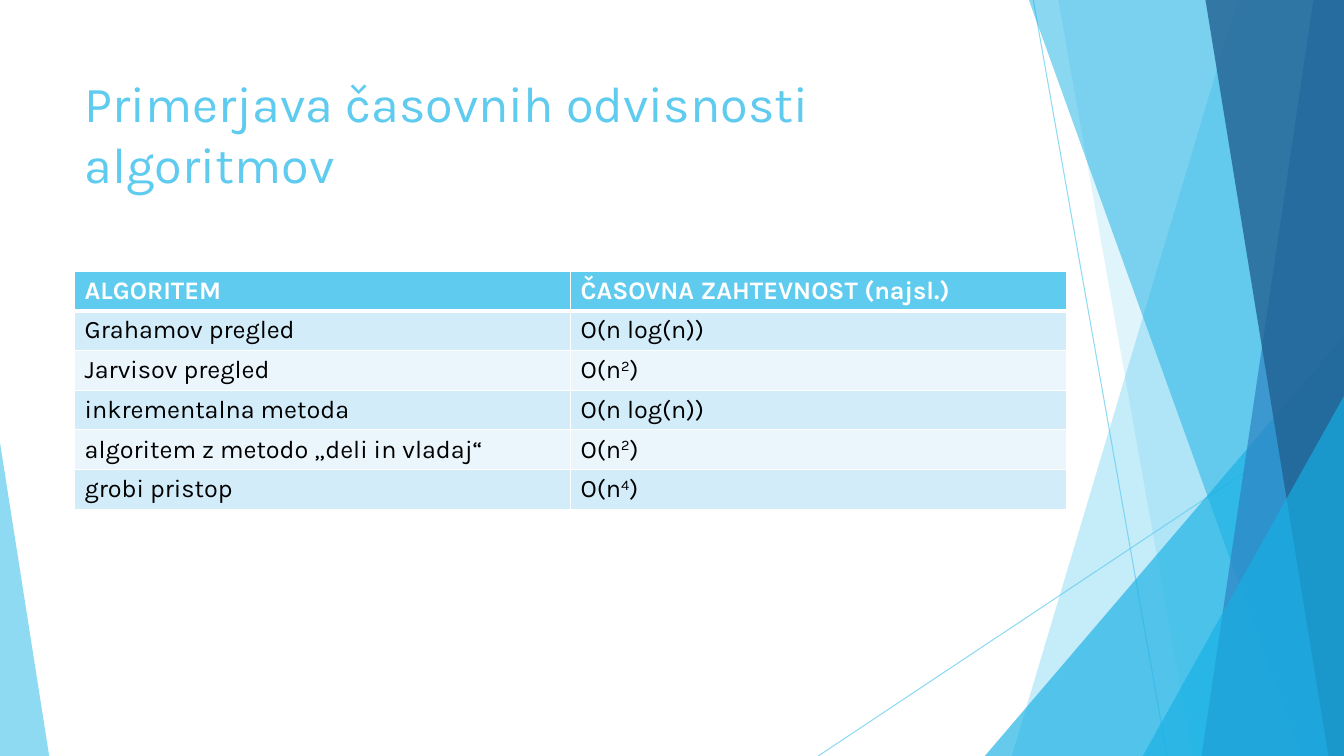
"""Build a slide comparing the time complexity of convex hull algorithms."""
from lxml.etree import SubElement
from pptx import Presentation
from pptx.dml.color import RGBColor
from pptx.enum.shapes import MSO_CONNECTOR, MSO_SHAPE
from pptx.enum.text import MSO_ANCHOR, MSO_AUTO_SIZE, PP_ALIGN
from pptx.oxml.ns import qn
from pptx.util import Cm, Pt

WIDTH, HEIGHT = 33.87, 19.05
FONT = "Karla"
COLORS = {
    "sky": "5FCBEF",
    "cyan": "17B0E4",
    "blue": "2E83C3",
    "navy": "226292",
    "odd": "D2ECF9",
    "even": "EAF6FC",
    "white": "FFFFFF",
    "black": "000000",
}
HEADINGS = ["ALGORITEM", "ČASOVNA ZAHTEVNOST (najsl.)"]
ALGORITHMS = [
    ("Grahamov pregled", "O(n log(n))"),
    ("Jarvisov pregled", "O(n^2^)"),
    ("inkrementalna metoda", "O(n log(n))"),
    ("algoritem z metodo „deli in vladaj“", "O(n^2^)"),
    ("grobi pristop", "O(n^4^)"),
]


def rgb(name):
    """Return the named colour."""
    return RGBColor.from_string(COLORS[name])


def paint(fill, color, opacity):
    """Fill with a colour at an opacity given in percent."""
    fill.solid()
    fill.fore_color.rgb = rgb(color)
    for element in fill._xPr.iter(qn("a:srgbClr")):
        SubElement(element, qn("a:alpha"), val=str(opacity * 1000))


def finish(shape, color, opacity):
    """Give a decorative shape its fill, with no outline or shadow."""
    shape.shadow.inherit = False
    shape.line.fill.background()
    paint(shape.fill, color, opacity)


def add_ray(page, start, end):
    """Draw a thin translucent line."""
    ray = page.shapes.add_connector(
        MSO_CONNECTOR.STRAIGHT, *(Cm(value) for value in start + end))
    ray.line.width = Pt(0.75)
    paint(ray.line.fill, "sky", 70)
    SubElement(ray._element.spPr, qn("a:effectLst"))


def add_band(page, top, bottom, color, opacity):
    """Draw a full-height band from a slanted edge to the right slide edge."""
    builder = page.shapes.build_freeform(Cm(top), 0)
    corners = [(WIDTH, 0), (WIDTH, HEIGHT), (bottom, HEIGHT)]
    builder.add_line_segments([(Cm(x), Cm(y)) for x, y in corners])
    finish(builder.convert_to_shape(), color, opacity)


def add_corner(page, left, top, width, apex, color, opacity):
    """Draw a triangle standing on the bottom slide edge."""
    corner = page.shapes.add_shape(
        MSO_SHAPE.ISOSCELES_TRIANGLE,
        Cm(left), Cm(top), Cm(width), Cm(HEIGHT - top))
    corner.adjustments[0] = apex
    finish(corner, color, opacity)


def add_decoration(page):
    """Draw the overlapping facets from back to front."""
    add_ray(page, (26.04, 0), (29.41, HEIGHT))
    add_ray(page, (WIDTH, 10.24), (20.62, HEIGHT))
    add_band(page, 31.19, 25.5, "sky", 36)
    add_band(page, 26.67, 30.05, "sky", 20)
    add_corner(page, 24.82, 8.46, 9.05, 1, "cyan", 66)
    add_band(page, 25.93, 32.79, "cyan", 50)
    add_band(page, 33.1, 30.28, "blue", 70)
    add_band(page, 30.38, 33.48, "navy", 80)
    add_corner(page, 28.8, 9.98, 5.07, 1, "cyan", 66)
    add_corner(page, 0, 11.15, 1.24, 0, "sky", 70)


def set_title(page, text):
    """Place and format the title."""
    title = page.shapes.title
    title.left, title.top = Cm(1.88), Cm(1.7)
    title.width, title.height = Cm(24.46), Cm(3.66)
    frame = title.text_frame
    frame.text = text
    frame.word_wrap = True
    frame.auto_size = MSO_AUTO_SIZE.NONE
    frame.vertical_anchor = MSO_ANCHOR.TOP
    para = frame.paragraphs[0]
    para.alignment = PP_ALIGN.LEFT
    para.font.name, para.font.size = FONT, Pt(36)
    para.font.color.rgb = rgb("sky")


def set_borders(cell, bottom, top):
    """Draw white cell borders, with top and bottom widths in points."""
    properties = cell._tc.get_or_add_tcPr()
    widths = {"a:lnL": 1, "a:lnR": 1, "a:lnT": top, "a:lnB": bottom}
    for index, (tag, width) in enumerate(widths.items()):
        line = SubElement(properties, qn(tag), w=str(Pt(width)))
        SubElement(SubElement(line, qn("a:solidFill")),
                   qn("a:srgbClr"), val=COLORS["white"])
        properties.insert(index, line)


def fill_cell(cell, text, row):
    """Write a cell, raising the part of the text between carets."""
    header = row == 0
    cell.fill.solid()
    cell.fill.fore_color.rgb = rgb(
        "sky" if header else "odd" if row % 2 else "even")
    set_borders(cell, bottom=3 if header else 1, top=3 if row == 1 else 1)
    para = cell.text_frame.paragraphs[0]
    for index, part in enumerate(text.split("^")):
        span = para.add_run()
        span.text = part
        if index % 2:
            span._r.get_or_add_rPr().set("baseline", "30000")
    para.font.name, para.font.size = FONT, Pt(18)
    para.font.bold = header
    para.font.color.rgb = rgb("white" if header else "black")


def add_comparison(page):
    """Add the table of algorithms and their complexities."""
    rows = [HEADINGS, *ALGORITHMS]
    table = page.shapes.add_table(
        len(rows), len(HEADINGS),
        Cm(1.88), Cm(6.83), Cm(25), Cm(len(rows))).table
    for row, texts in enumerate(rows):
        for column, text in enumerate(texts):
            fill_cell(table.cell(row, column), text, row)


def main():
    """Build and save the deck."""
    deck = Presentation()
    deck.slide_width, deck.slide_height = Cm(WIDTH), Cm(HEIGHT)
    page = deck.slides.add_slide(deck.slide_layouts[5])
    add_decoration(page)
    set_title(page, "Primerjava časovnih odvisnosti algoritmov")
    add_comparison(page)
    deck.save("out.pptx")


if __name__ == "__main__":
    main()
